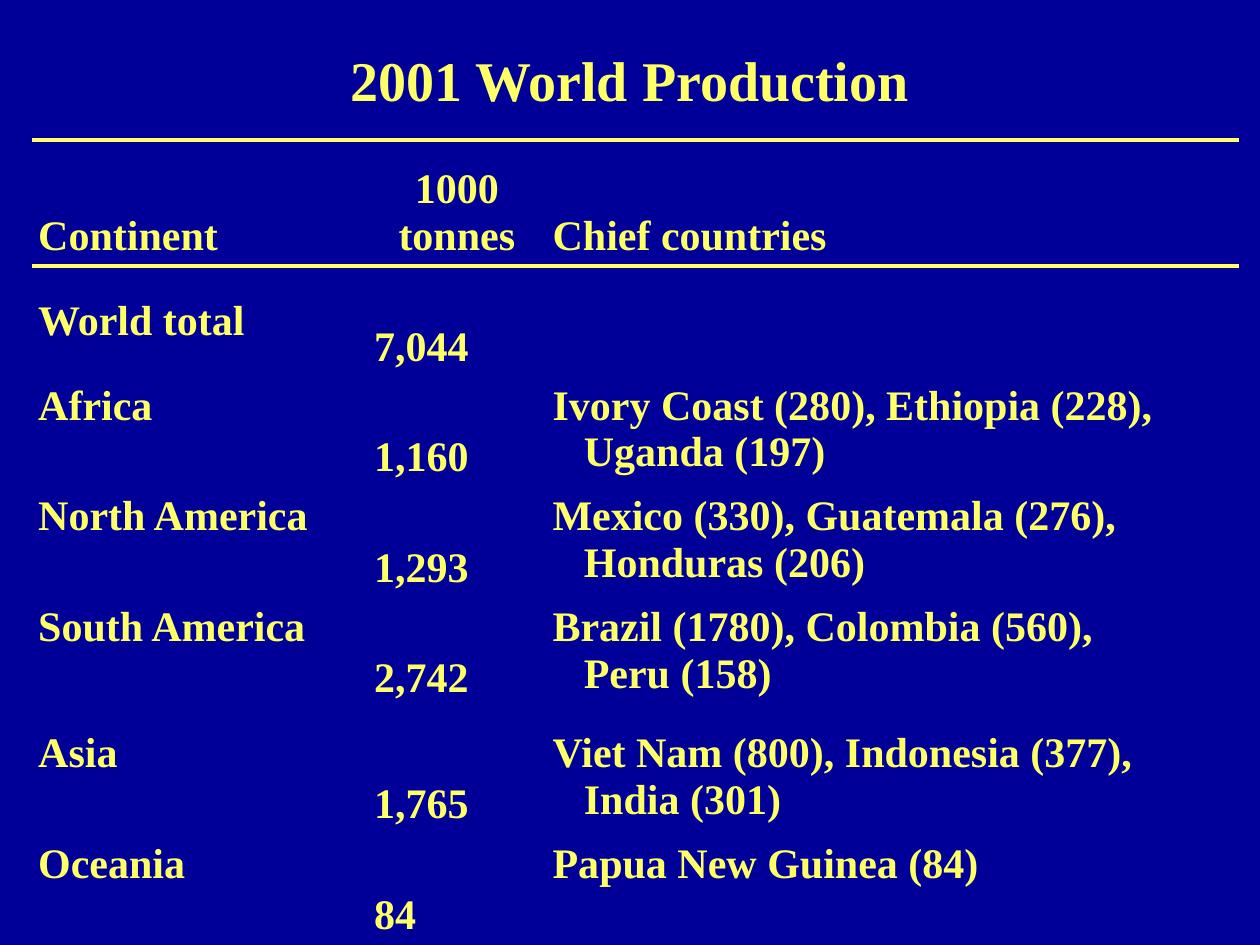
from lxml import etree
from pptx import Presentation
from pptx.dml.color import RGBColor
from pptx.enum.text import MSO_ANCHOR, PP_ALIGN
from pptx.oxml.ns import qn
from pptx.util import Cm, Pt

LEFT, CENTER = PP_ALIGN.LEFT, PP_ALIGN.CENTER
TOP, MIDDLE, BOTTOM = MSO_ANCHOR.TOP, MSO_ANCHOR.MIDDLE, MSO_ANCHOR.BOTTOM

# Content
TITLE = "2001 World Production"
HEADER = ("Continent", "1000\vtonnes", "Chief countries")
PRODUCTION = [
    ("World total", "7,044", ""),
    ("Africa", "1,160", "Ivory Coast (280), Ethiopia (228), Uganda (197)"),
    ("North America", "1,293", "Mexico (330), Guatemala (276), Honduras (206)"),
    ("South America", "2,742", "Brazil (1780), Colombia (560),\vPeru (158)"),
    ("Asia", "1,765", "Viet Nam (800), Indonesia (377), India (301)"),
    ("Oceania", "84", "Papua New Guinea (84)"),
]

# Theme and layout
THEME = {
    "font": "Times New Roman",
    "background": "000099",
    "ink": "FFFF66",
    "title": 32,
    "body": 24,
    "rule": 2.25,
}
COLUMN_WIDTHS = (6.77, 3.6, 13.97)
TALL_ROW, SHORT_ROW = 2.54, 1.42
TALL_ROWS = ("Continent", "South America")
CELL_INSET = Cm(0.13)
HANGING = Cm(0.63)


def write(frame, text, size=THEME["body"], align=LEFT, hanging=0):
    para = frame.paragraphs[0]
    para.text = text
    para.alignment = align
    properties = para._p.get_or_add_pPr()
    properties.set("marL", str(hanging))
    properties.set("indent", str(-hanging))
    para.font.size = Pt(size)
    for line_break in para._p.findall(qn("a:br")):
        etree.SubElement(line_break, qn("a:rPr"), sz=str(size * 100))
    for span in para.runs:
        span.font.name = THEME["font"]
        span.font.size = Pt(size)
        span.font.bold = True
        span.font.color.rgb = RGBColor.from_string(THEME["ink"])


def set_borders(cell, ruled_sides):
    properties = cell._tc.get_or_add_tcPr()
    for side in "LRTB":
        line = etree.SubElement(properties, qn(f"a:ln{side}"), w=str(Pt(THEME["rule"])))
        if side in ruled_sides:
            fill = etree.SubElement(line, qn("a:solidFill"))
            etree.SubElement(fill, qn("a:srgbClr"), val=THEME["ink"])
        else:
            etree.SubElement(line, qn("a:noFill"))


def add_production_table(slide):
    rows = [HEADER] + PRODUCTION
    heights = [TALL_ROW if row[0] in TALL_ROWS else SHORT_ROW for row in rows]
    table = slide.shapes.add_table(
        len(rows), len(HEADER), Cm(0.64), Cm(2.82),
        Cm(sum(COLUMN_WIDTHS)), Cm(sum(heights)),
    ).table
    table.first_row = table.horz_banding = False
    for column, width in zip(table.columns, COLUMN_WIDTHS):
        column.width = Cm(width)
    for row, height in zip(table.rows, heights):
        row.height = Cm(height)

    anchors = {0: BOTTOM, 1: MIDDLE}
    rules = {0: "TB", 1: "T"}
    for i, row in enumerate(rows):
        for j, text in enumerate(row):
            cell = table.cell(i, j)
            cell.margin_left = cell.margin_right = CELL_INSET
            cell.margin_top = cell.margin_bottom = CELL_INSET
            cell.vertical_anchor = anchors.get(i, TOP)
            set_borders(cell, rules.get(i, ""))
            cell.fill.background()
            if j != 1:
                write(cell.text_frame, text, hanging=HANGING)
            elif i == 0:
                write(cell.text_frame, text, align=CENTER)
            else:
                # Figures stand on the second line of their cell
                write(cell.text_frame, "\v" + text)


def main():
    deck = Presentation()
    deck.slide_width, deck.slide_height = Cm(25.4), Cm(19.05)
    slide = deck.slides.add_slide(deck.slide_layouts[5])
    slide.background.fill.solid()
    slide.background.fill.fore_color.rgb = RGBColor.from_string(THEME["background"])

    # Title
    title = slide.shapes.title
    title.left, title.top, title.width, title.height = Cm(1.9), Cm(0), Cm(21.6), Cm(3.18)
    title.text_frame.vertical_anchor = MIDDLE
    write(title.text_frame, TITLE, size=THEME["title"], align=CENTER)

    # Production by continent
    add_production_table(slide)
    deck.save("out.pptx")


if __name__ == "__main__":
    main()
